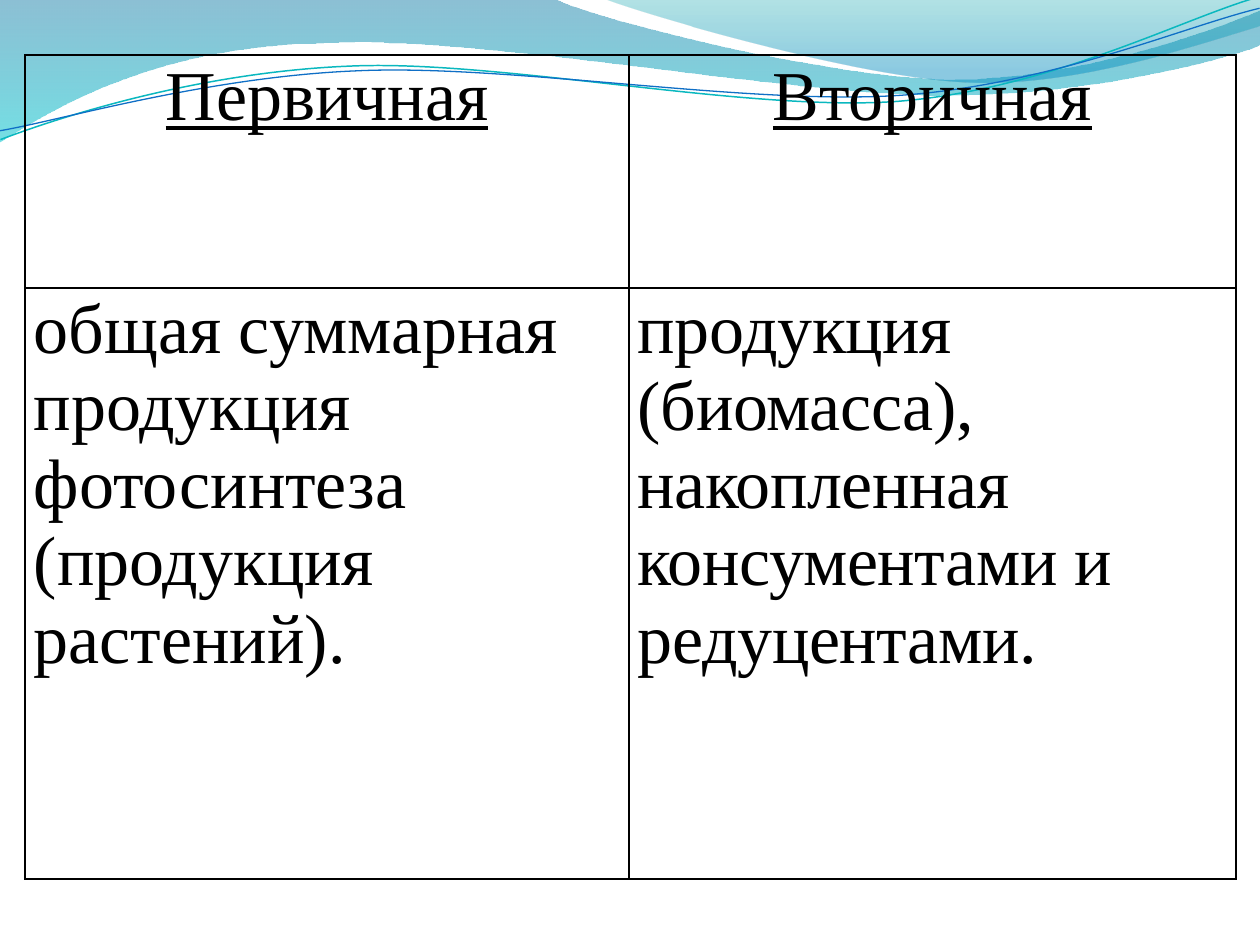
from dataclasses import dataclass

from lxml.etree import SubElement
from pptx import Presentation
from pptx.dml.color import RGBColor
from pptx.enum.text import PP_ALIGN as Align
from pptx.oxml.ns import qn
from pptx.util import Emu, Pt

SCALE = 914400 / 126  # EMU in one px
FONT = "Times New Roman"
COLORS = {
    "ink": "000000",
    "deep": "0074A1",
    "aqua": "00C6CF",
    "teal": "00A1A9",
    "sky": "008BBF",
    "teal_line": "0AB8BF",
    "blue_line": "0F6FC6",
}

Point = tuple[int, int]
Segment = tuple[Point, ...]  # one point: straight line, three: cubic curve


@dataclass(frozen=True)
class Stop:
    position: float
    color: str
    alpha: int  # percent


@dataclass(frozen=True)
class Wave:
    start: Point
    segments: tuple[Segment, ...]
    stops: tuple[Stop, Stop]


@dataclass(frozen=True)
class Strand:
    start: Point
    segments: tuple[Segment, ...]
    color: str
    width: float  # points


@dataclass(frozen=True)
class Entry:
    text: str
    heading: bool = False
    spacing: int = 0  # hundredths of a point


WAVES = (
    Wave(
        (0, 0),
        (
            ((554, -1),),
            ((600, 21), (837, 79), (955, 79)),
            ((1075, 79), (1207, 33), (1260, 11)),
            ((1261, 45),),
            ((1239, 55), (1096, 96), (940, 95)),
            ((784, 95), (481, 35), (324, 43)),
            ((163, 45), (58, 105), (-1, 142)),
            ((0, 0),),
        ),
        (Stop(0, "deep", 45), Stop(1, "aqua", 55)),
    ),
    Wave(
        (604, -1),
        (
            ((641, 14), (859, 78), (969, 82)),
            ((1079, 87), (1211, 40), (1260, 26)),
            ((1260, 0),),
            ((604, -1),),
        ),
        (Stop(0, "teal", 30), Stop(0.8, "sky", 45)),
    ),
)
# Strands are laid out level, then tilted
STRAND_TILT = 357.3
STRANDS = (
    Strand(
        (-2, 110),
        (
            ((59, 90), (199, 52), (350, 53)),
            ((499, 53), (745, 118), (896, 114)),
            ((1049, 109), (1184, 45), (1260, 27)),
        ),
        "teal_line",
        0.85,
    ),
    Strand(
        (-2, 101),
        (
            ((57, 94), (207, 57), (357, 58)),
            ((509, 58), (750, 112), (902, 108)),
            ((1052, 104), (1188, 52), (1262, 38)),
        ),
        "blue_line",
        0.75,
    ),
)

TABLE_AT = (25, 55)
COLUMN_WIDTHS = (604, 607)
ROW_HEIGHTS = (233, 591)
ENTRIES = (
    (Entry("Первичная", heading=True), Entry("Вторичная", heading=True)),
    (
        Entry("общая суммарная продукция фотосинтеза (продукция растений)."),
        Entry("продукция (биомасса), накопленная консументами и редуцентами.", spacing=-20),
    ),
)


def px(length: int) -> Emu:
    return Emu(round(length * SCALE))


def rgb(name: str) -> RGBColor:
    return RGBColor.from_string(COLORS[name])


def draw_outline(page, item: Wave | Strand, close: bool):
    """Lay a line through every point, then bend each triple into a cubic curve."""
    builder = page.shapes.build_freeform(*map(px, item.start))
    points = [point for segment in item.segments for point in segment]
    builder.add_line_segments([(px(x), px(y)) for x, y in points], close=close)
    shape = builder.convert_to_shape()
    shape.shadow.inherit = False
    steps = iter(list(shape._element.spPr.iter(qn("a:lnTo"))))
    for segment in item.segments:
        first, *others = [next(steps) for _ in segment]
        if others:
            first.tag = qn("a:cubicBezTo")
            for other in others:
                first.append(other[0])
                other.getparent().remove(other)
    return shape


def draw_wave(page, wave: Wave) -> None:
    shape = draw_outline(page, wave, close=True)
    shape.line.fill.background()
    shape.fill.gradient()
    shape.fill.gradient_angle = 270
    for target, stop in zip(shape.fill.gradient_stops, wave.stops):
        target.position = stop.position
        target.color.rgb = rgb(stop.color)
    for color, stop in zip(shape._element.spPr.iter(qn("a:srgbClr")), wave.stops):
        SubElement(color, qn("a:alpha"), val=str(stop.alpha * 1000))


def draw_strand(page, strand: Strand) -> None:
    shape = draw_outline(page, strand, close=False)
    shape.rotation = STRAND_TILT
    shape.fill.background()
    shape.line.color.rgb = rgb(strand.color)
    shape.line.width = Pt(strand.width)


def add_borders(cell) -> None:
    properties = cell._tc.get_or_add_tcPr()
    for index, side in enumerate(("a:lnL", "a:lnR", "a:lnT", "a:lnB")):
        line = SubElement(properties, qn(side), w=str(Pt(1)))
        fill = SubElement(line, qn("a:solidFill"))
        SubElement(fill, qn("a:srgbClr"), val=COLORS["ink"])
        properties.insert(index, line)


def fill_cell(cell, entry: Entry) -> None:
    cell.fill.background()
    cell.margin_left = cell.margin_right = px(9)
    cell.margin_top = cell.margin_bottom = px(3)
    add_borders(cell)
    para = cell.text_frame.paragraphs[0]
    para.alignment = Align.CENTER if entry.heading else Align.LEFT
    para.font.name = FONT
    para.font.size = Pt(40)
    para.font.underline = entry.heading
    para.font.color.rgb = rgb("ink")
    span = para.add_run()
    span.text = entry.text
    if entry.spacing:
        span._r.get_or_add_rPr().set("spc", str(entry.spacing))


def draw_table(page) -> None:
    size = (sum(COLUMN_WIDTHS), sum(ROW_HEIGHTS))
    frame = page.shapes.add_table(
        len(ROW_HEIGHTS), len(COLUMN_WIDTHS), *map(px, TABLE_AT + size)
    )
    table = frame.table
    table.first_row = table.horz_banding = False
    for column, width in zip(table.columns, COLUMN_WIDTHS):
        column.width = px(width)
    for row, height, entries in zip(table.rows, ROW_HEIGHTS, ENTRIES):
        row.height = px(height)
        for cell, entry in zip(row.cells, entries):
            fill_cell(cell, entry)


def main() -> None:
    deck = Presentation()
    deck.slide_width, deck.slide_height = px(1260), px(945)
    page = deck.slides.add_slide(deck.slide_layouts[6])

    # Wavy header
    for wave in WAVES:
        draw_wave(page, wave)
    for strand in STRANDS:
        draw_strand(page, strand)

    # Comparison of the two kinds of production
    draw_table(page)
    deck.save("out.pptx")


if __name__ == "__main__":
    main()
